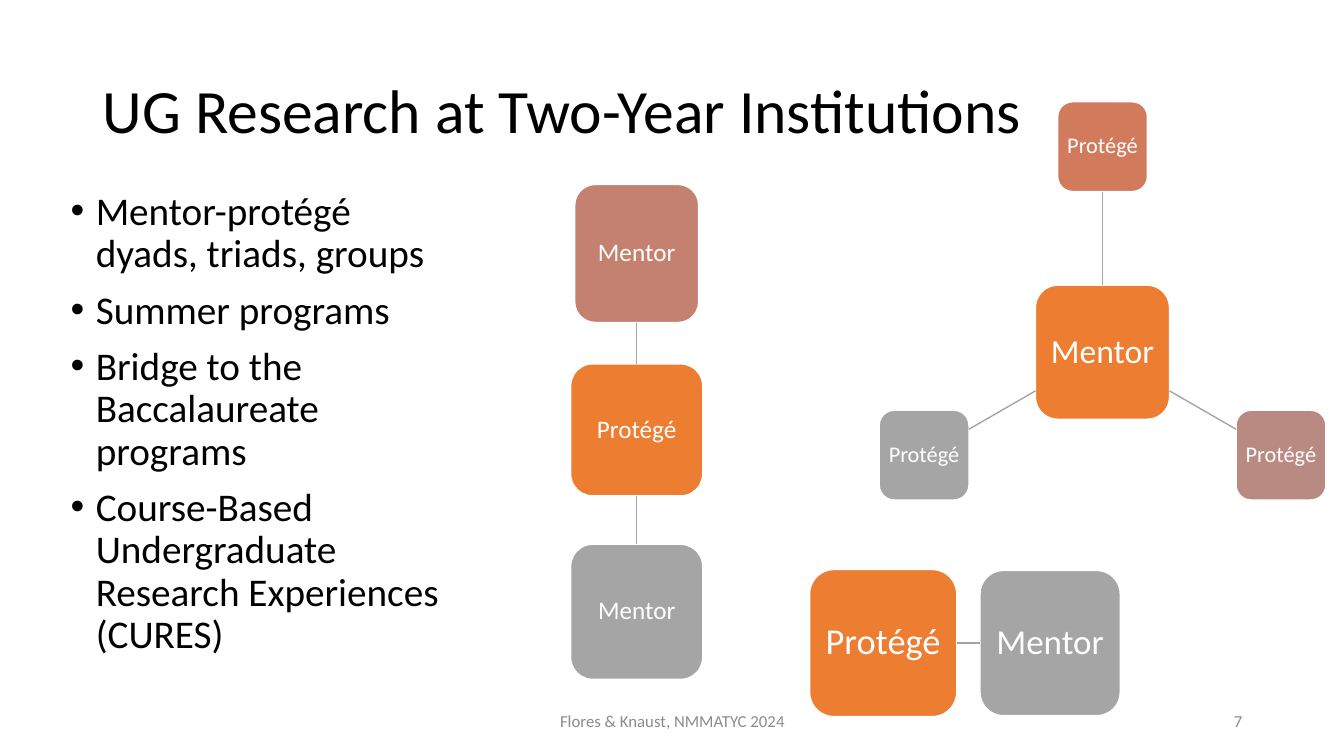
from pptx import Presentation, util as u
from pptx.dml.color import RGBColor
from pptx.enum import shapes, text
from pptx.oxml import ns, xmlchemy

PX = 9144  # 100 px to the inch
FONT = "Calibri"
BLACK = RGBColor(0, 0, 0)
WHITE = RGBColor(0xFF, 0xFF, 0xFF)
GREY = RGBColor(0xA5, 0xA5, 0xA5)
MUTED = RGBColor(0x8C, 0x8C, 0x8C)
ORANGE = RGBColor(0xED, 0x7D, 0x31)
CORAL = RGBColor(0xD1, 0x7B, 0x5C)
ROSE = RGBColor(0xC4, 0x81, 0x70)
MAUVE = RGBColor(0xB9, 0x8A, 0x82)

TITLE = "UG Research at Two-Year Institutions"
POINTS = [
    "Mentor-protégé dyads, triads, groups",
    "Summer programs",
    "Bridge to the Baccalaureate programs",
    "Course-Based Undergraduate Research Experiences (CURES)",
]

# Each diagram: boxes as (label, left, top, width, height, fill, size),
# then the pairs of boxes that are joined
CHAIN = [
    ("Protégé", 566, 361, 131, 131, ORANGE, 18),
    ("Mentor", 570, 183, 123, 137, ROSE, 18),
    ("Mentor", 566, 540, 131, 134, GREY, 18),
], [(0, 1), (0, 2)]
PAIR = [
    ("Protégé", 803, 565, 146, 146, ORANGE, 26),
    ("Mentor", 972, 566, 139, 144, GREY, 25),
], [(0, 1)]
STAR = [
    ("Mentor", 1027, 283, 133, 133, ORANGE, 24),
    ("Protégé", 1049, 101, 89, 89, CORAL, 16),
    ("Protégé", 1226, 407, 89, 89, MAUVE, 16),
    ("Protégé", 872, 407, 89, 89, GREY, 16),
], [(0, 1), (0, 2), (0, 3)]


def place(shape, *box):
    shape.left, shape.top, shape.width, shape.height = (n * PX for n in box)


def write(shape, *lines, size, color, align=text.PP_ALIGN.LEFT,
          anchor=text.MSO_ANCHOR.MIDDLE, space=0.9, before=0, inset=None):
    frame = shape.text_frame
    frame.word_wrap = True
    frame.auto_size = text.MSO_AUTO_SIZE.NONE
    frame.vertical_anchor = anchor
    if inset is not None:
        frame.margin_left = frame.margin_right = inset * PX
        frame.margin_top = frame.margin_bottom = inset * PX
    for i, line in enumerate(lines):
        para = frame.paragraphs[0] if i == 0 else frame.add_paragraph()
        para.alignment = align
        para.line_spacing = space
        para.space_before = u.Pt(before)
        run = para.add_run()
        run.text = line
        run.font.size = u.Pt(size)
        run.font.name = FONT
        run.font.color.rgb = color


def label(slide, words, box, align):
    note = slide.shapes.add_textbox(0, 0, 0, 0)
    place(note, *box)
    write(note, words, size=12, color=MUTED, align=align, space=1.0)


def node(slide, words, left, top, width, height, fill, size):
    box = slide.shapes.add_shape(shapes.MSO_SHAPE.ROUNDED_RECTANGLE,
                                 left * PX, top * PX, width * PX, height * PX)
    box.shadow.inherit = False
    box.fill.solid()
    box.fill.fore_color.rgb = fill
    box.line.color.rgb = WHITE
    box.line.width = u.Pt(1)
    write(box, words, size=size, color=WHITE,
          align=text.PP_ALIGN.CENTER, inset=0)
    return box


def edge(box, other):
    """Point where the line between two box centres leaves the first box."""
    x, y = box.left + box.width / 2, box.top + box.height / 2
    dx = other.left + other.width / 2 - x
    dy = other.top + other.height / 2 - y
    part = min(half / abs(gap) for half, gap in
               ((box.width / 2, dx), (box.height / 2, dy)) if gap)
    return round(x + dx * part), round(y + dy * part)


def link(slide, first, second):
    line = slide.shapes.add_connector(shapes.MSO_CONNECTOR.STRAIGHT,
                                      *edge(first, second),
                                      *edge(second, first))
    line.line.color.rgb = GREY
    line.line.width = u.Pt(1)
    props = line._element.spPr
    props.append(xmlchemy.OxmlElement("a:effectLst"))


def diagram(slide, nodes, links):
    boxes = [node(slide, *item) for item in nodes]
    for a, b in links:
        link(slide, boxes[a], boxes[b])


def main():
    deck = Presentation()
    deck.slide_width, deck.slide_height = 1333 * PX, 750 * PX
    slide = deck.slides.add_slide(deck.slide_layouts[1])

    # Title and bullet list
    title, body = slide.placeholders
    place(title, 92, 40, 1150, 145)
    write(title, TITLE, size=44, color=BLACK)
    place(body, 60, 185, 395, 476)
    write(body, *POINTS, size=28, color=BLACK,
          anchor=text.MSO_ANCHOR.TOP, before=10)
    for para in body.text_frame.paragraphs:
        props = para._p.get_or_add_pPr()
        props.set("marL", str(25 * PX))
        props.set("indent", str(-25 * PX))

    # Mentoring diagrams
    for nodes, links in (CHAIN, PAIR, STAR):
        diagram(slide, nodes, links)

    # Footer and slide number
    label(slide, "Flores & Knaust, NMMATYC 2024", (442, 695, 450, 40),
          text.PP_ALIGN.CENTER)
    label(slide, "7", (942, 695, 300, 40), text.PP_ALIGN.RIGHT)

    deck.save("out.pptx")


if __name__ == "__main__":
    main()
